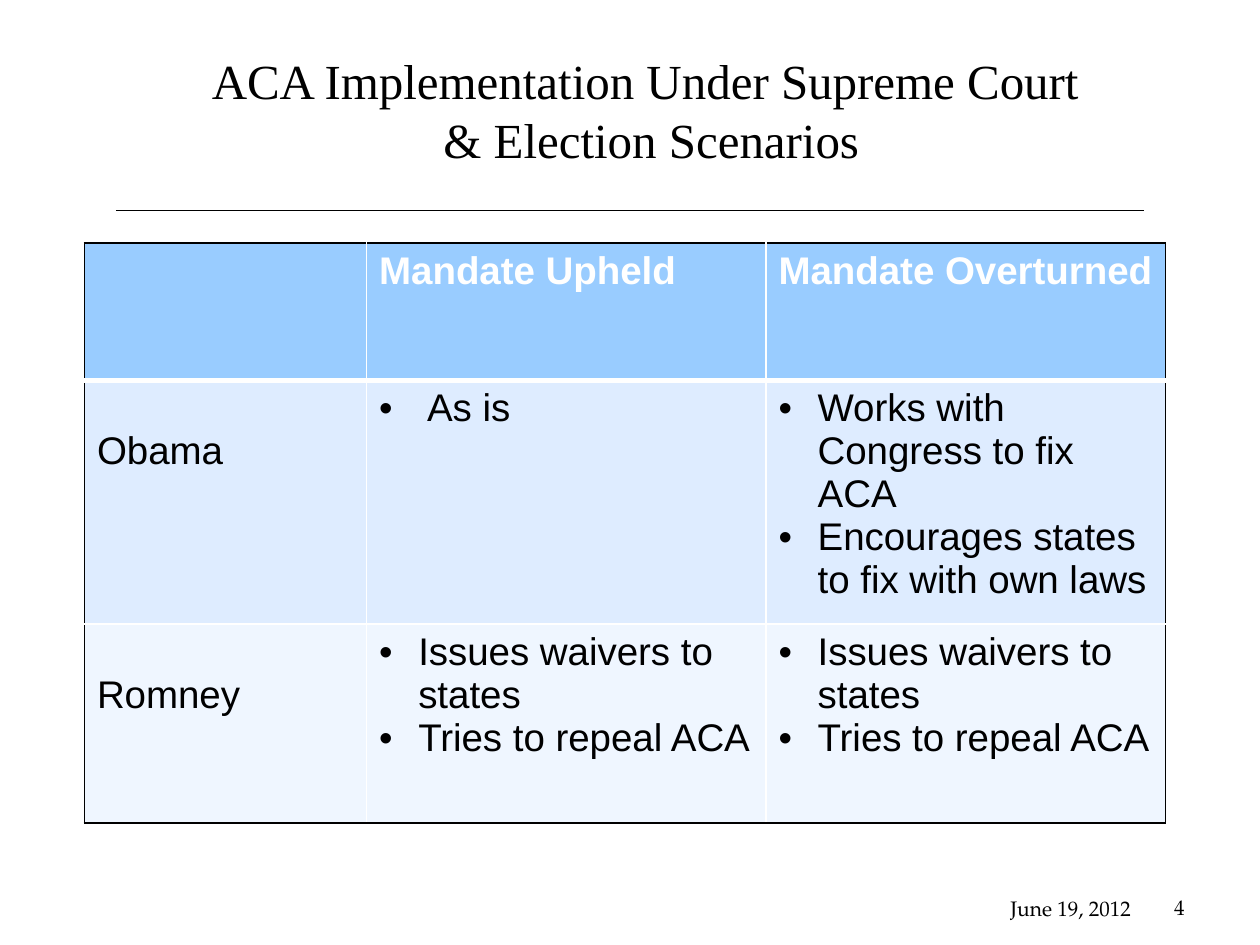
from dataclasses import dataclass
from lxml.etree import SubElement as Sub
from pptx import Presentation
from pptx.dml.color import RGBColor as RGB
from pptx.enum.shapes import MSO_CONNECTOR as Conn
from pptx.enum.text import MSO_ANCHOR as Anchor, PP_ALIGN as Align
from pptx.oxml.ns import qn
from pptx.util import Inches, Pt


@dataclass(frozen=True)
class Theme:
    ink: str = "000000"
    white: str = "FFFFFF"
    rows: tuple = ("99CCFF", "DEECFF", "EFF6FF")
    serif: str = "Times New Roman"
    sans: str = "Arial"
    foot: str = "TeX Gyre Pagella"
    title: int = 28
    body: int = 22
    small: int = 12


THEME = Theme()
COLS = (2.24, 3.17, 3.17)
ROWS = (1.09, 1.93, 1.58)
WAIVE = ["Issues waivers to states", "Tries to repeal ACA"]
CELLS = (
    ("", "Mandate Upheld", "Mandate Overturned"),
    ("Obama", ["As is"],
     ["Works with Congress to fix ACA",
      "Encourages states to fix with own laws"]),
    ("Romney", WAIVE, WAIVE),
)


def style(para, name, size, color=THEME.ink, bold=False):
    font = para.font
    font.name, font.size, font.bold = name, Pt(size), bold
    font.color.rgb = RGB.from_string(color)


def add_text(slide, box, text, name, size, align=Align.LEFT, anchor=Anchor.TOP):
    frame = slide.shapes.add_textbox(*map(Inches, box)).text_frame
    frame.word_wrap = True
    frame.vertical_anchor = anchor
    para = frame.paragraphs[0]
    para.text = text
    para.alignment = align
    style(para, name, size)


def add_rule(slide, left, right, y):
    line = slide.shapes.add_connector(
        Conn.STRAIGHT, Inches(left), Inches(y), Inches(right), Inches(y))
    line.line.color.rgb = RGB.from_string(THEME.ink)
    line.line.width = Pt(0.75)
    Sub(line._element.spPr, qn("a:effectLst"))


def add_bullet(para, indent):
    props = para._p.get_or_add_pPr()
    props.set("marL", str(Inches(indent)))
    props.set("indent", str(-Inches(indent)))
    Sub(props, qn("a:buFont"), typeface=THEME.sans)
    Sub(props, qn("a:buChar"), char="•")


def set_edge(cell, side, color, width):
    edge = Sub(cell._tc.get_or_add_tcPr(), qn(f"a:ln{side}"), w=str(Pt(width)))
    Sub(Sub(edge, qn("a:solidFill")), qn("a:srgbClr"), val=color)


def paint(cell, row, col):
    # Black outside, white inside, heavy rule below the header
    outer = {"L": col == 0, "R": col == len(COLS) - 1,
             "T": row == 0, "B": row == len(ROWS) - 1}
    for side, out in outer.items():
        width = 3 if row == 0 and side == "B" else 1
        set_edge(cell, side, THEME.ink if out else THEME.white, width)
    cell.fill.solid()
    cell.fill.fore_color.rgb = RGB.from_string(THEME.rows[row])


def fill_cell(cell, item, row, col):
    listed = isinstance(item, list)
    head = row == 0
    cell.text = "\n".join(item) if listed else item
    # Row names sit one line lower than the bullets
    cell.margin_top = Inches(0.05 if head or col else 0.39)
    for para in cell.text_frame.paragraphs:
        para.alignment = Align.LEFT
        if listed:
            add_bullet(para, 0.38 if len(item) == 1 else 0.31)
        style(para, THEME.sans, THEME.body,
              THEME.white if head else THEME.ink, head)


def add_grid(slide, left, top):
    table = slide.shapes.add_table(
        len(ROWS), len(COLS), Inches(left), Inches(top),
        Inches(sum(COLS)), Inches(sum(ROWS))).table
    table.first_row = table.horz_banding = False
    for col, width in enumerate(COLS):
        table.columns[col].width = Inches(width)
    for row, height in enumerate(ROWS):
        table.rows[row].height = Inches(height)
        for col, item in enumerate(CELLS[row]):
            cell = table.cell(row, col)
            paint(cell, row, col)
            fill_cell(cell, item, row, col)


def main():
    deck = Presentation()
    deck.slide_width, deck.slide_height = Inches(10), Inches(7.5)
    slide = deck.slides.add_slide(deck.slide_layouts[6])

    # Title and rule
    add_rule(slide, 0.92, 9.08, 1.67)
    add_text(slide, (0.92, 0.33, 8.5, 1.08),
             "ACA Implementation Under Supreme Court \v& Election Scenarios",
             THEME.serif, THEME.title, Align.CENTER, Anchor.MIDDLE)

    # Scenario table
    add_grid(slide, 0.67, 1.93)

    # Footer
    add_text(slide, (7.92, 7.06, 2.33, 0.52), "June 19, 2012",
             THEME.foot, THEME.small)
    add_text(slide, (7.17, 7, 2.33, 0.4), "4", THEME.foot, THEME.small,
             Align.RIGHT, Anchor.MIDDLE)

    deck.save("out.pptx")


if __name__ == "__main__":
    main()
